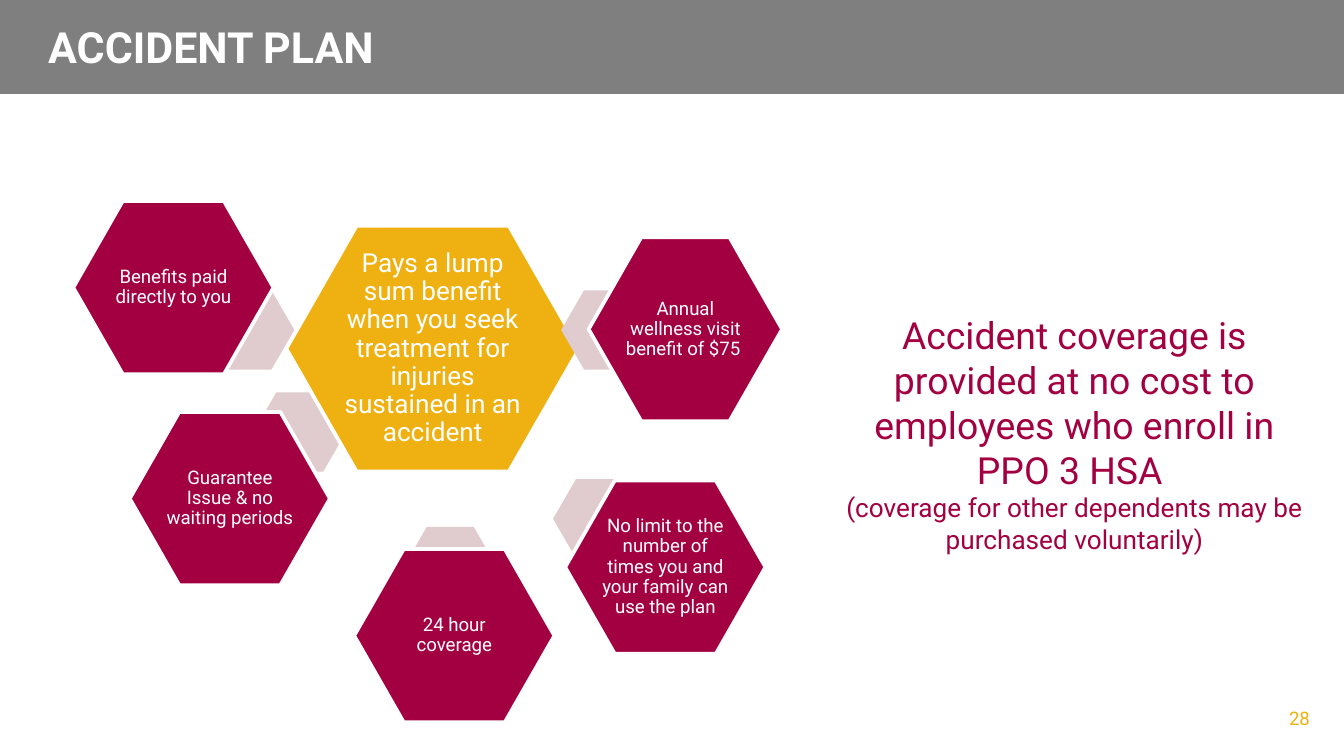
from pptx import Presentation
from pptx.dml.color import RGBColor
from pptx.enum.shapes import MSO_SHAPE
from pptx.enum.text import MSO_ANCHOR, MSO_AUTO_SIZE, PP_ALIGN
from pptx.util import Pt

PX = 4572  # EMU per px, 200 px to the inch
FONT = "Roboto"
HEXAGON, RECTANGLE = MSO_SHAPE.HEXAGON, MSO_SHAPE.RECTANGLE
LEFT, CENTER, RIGHT = PP_ALIGN.LEFT, PP_ALIGN.CENTER, PP_ALIGN.RIGHT
MIDDLE = MSO_ANCHOR.MIDDLE
FIT_SHAPE = MSO_AUTO_SIZE.SHAPE_TO_FIT_TEXT

COLORS = {
    "white": "FFFFFF",
    "banner": "7F7F7F",
    "crimson": "A30042",
    "gold": "EEB111",
    "blush": "E0CCCF",
}

# Hexagon box, link position and wording of each benefit
LINK_SIZE = (138, 118)
BENEFITS = [
    ((109, 299, 298, 258), (300, 432), "Benefits paid directly to you"),
    ((876, 353, 288, 274), (835, 432), "Annual wellness visit benefit of $75 "),
    ((841, 715, 298, 258), (823, 713),
     "No limit to the number of times you and your family can use the plan"),
    ((527, 817, 298, 258), (601, 784), "24 hour coverage"),
    ((193, 613, 298, 258), (377, 584), "Guarantee Issue & no waiting periods"),
]


def rgb(name):
    return RGBColor.from_string(COLORS[name])


def scaled(box):
    return [length * PX for length in box]


def set_insets(frame, horizontal, vertical):
    frame.margin_left = frame.margin_right = horizontal * PX
    frame.margin_top = frame.margin_bottom = vertical * PX


def write(paragraph, text, size, color, align=LEFT, bold=False):
    paragraph.alignment = align
    run = paragraph.add_run()
    run.text = text
    run.font.name = FONT
    run.font.size = Pt(size)
    run.font.bold = bold
    run.font.color.rgb = rgb(color)


def add_filled(slide, kind, box, color):
    shape = slide.shapes.add_shape(kind, *scaled(box))
    shape.shadow.inherit = False
    shape.fill.solid()
    shape.fill.fore_color.rgb = rgb(color)
    shape.line.fill.background()
    return shape


def add_link(slide, position):
    """Add the pale hexagon that ties a benefit to the centre."""
    link = add_filled(slide, HEXAGON, (*position, *LINK_SIZE), "blush")
    link.adjustments[0] = 0.289


def add_labelled_hexagon(slide, box, color, text, size, inset):
    hexagon = add_filled(slide, HEXAGON, box, color)
    hexagon.adjustments[0] = 0.286
    hexagon.line.color.rgb = rgb("white")
    hexagon.line.width = Pt(2)
    frame = hexagon.text_frame
    frame.word_wrap = True
    frame.vertical_anchor = MIDDLE
    set_insets(frame, inset, inset)
    paragraph = frame.paragraphs[0]
    paragraph.line_spacing = 0.9
    write(paragraph, text, size, "white", CENTER)


def add_text_frame(slide, box):
    frame = slide.shapes.add_textbox(*scaled(box)).text_frame
    frame.word_wrap = True
    return frame


def add_header(slide):
    add_filled(slide, RECTANGLE, (-2, 0, 2002, 140), "banner")
    title = add_text_frame(slide, (52, 0, 1196, 138))
    title.auto_size = FIT_SHAPE
    set_insets(title, 20, 30)
    paragraph = title.paragraphs[0]
    paragraph.space_before = paragraph.space_after = Pt(6)
    write(paragraph, "ACCIDENT PLAN", 23, "white", bold=True)


def add_coverage_note(slide):
    note = add_text_frame(slide, (1222, 455, 754, 384))
    note.auto_size = FIT_SHAPE
    write(note.paragraphs[0],
          "Accident coverage is provided at no cost to employees "
          "who enroll in PPO 3 HSA ", 20, "crimson", CENTER)
    write(note.add_paragraph(),
          "(coverage for other dependents may be purchased voluntarily)",
          14, "crimson", CENTER)


def add_page_number(slide):
    number = add_text_frame(slide, (1503, 1042, 466, 60))
    write(number.paragraphs[0], "28", 10, "gold", RIGHT)


def add_benefit_cluster(slide):
    *front_benefits, guarantee = BENEFITS
    add_link(slide, guarantee[1])  # this link lies behind the centre
    add_labelled_hexagon(
        slide, (426, 336, 436, 366), "gold",
        "Pays a lump sum benefit when you seek treatment for injuries "
        "sustained in an accident", 14, 4)
    for _, link_position, _ in front_benefits:
        add_link(slide, link_position)
    for box, _, text in BENEFITS:
        add_labelled_hexagon(slide, box, "crimson", text, 10, 2)


def main():
    deck = Presentation()
    deck.slide_width, deck.slide_height = scaled((2000, 1125))
    slide = deck.slides.add_slide(deck.slide_layouts[6])
    add_header(slide)
    add_coverage_note(slide)
    add_page_number(slide)
    add_benefit_cluster(slide)
    deck.save("out.pptx")


if __name__ == "__main__":
    main()
